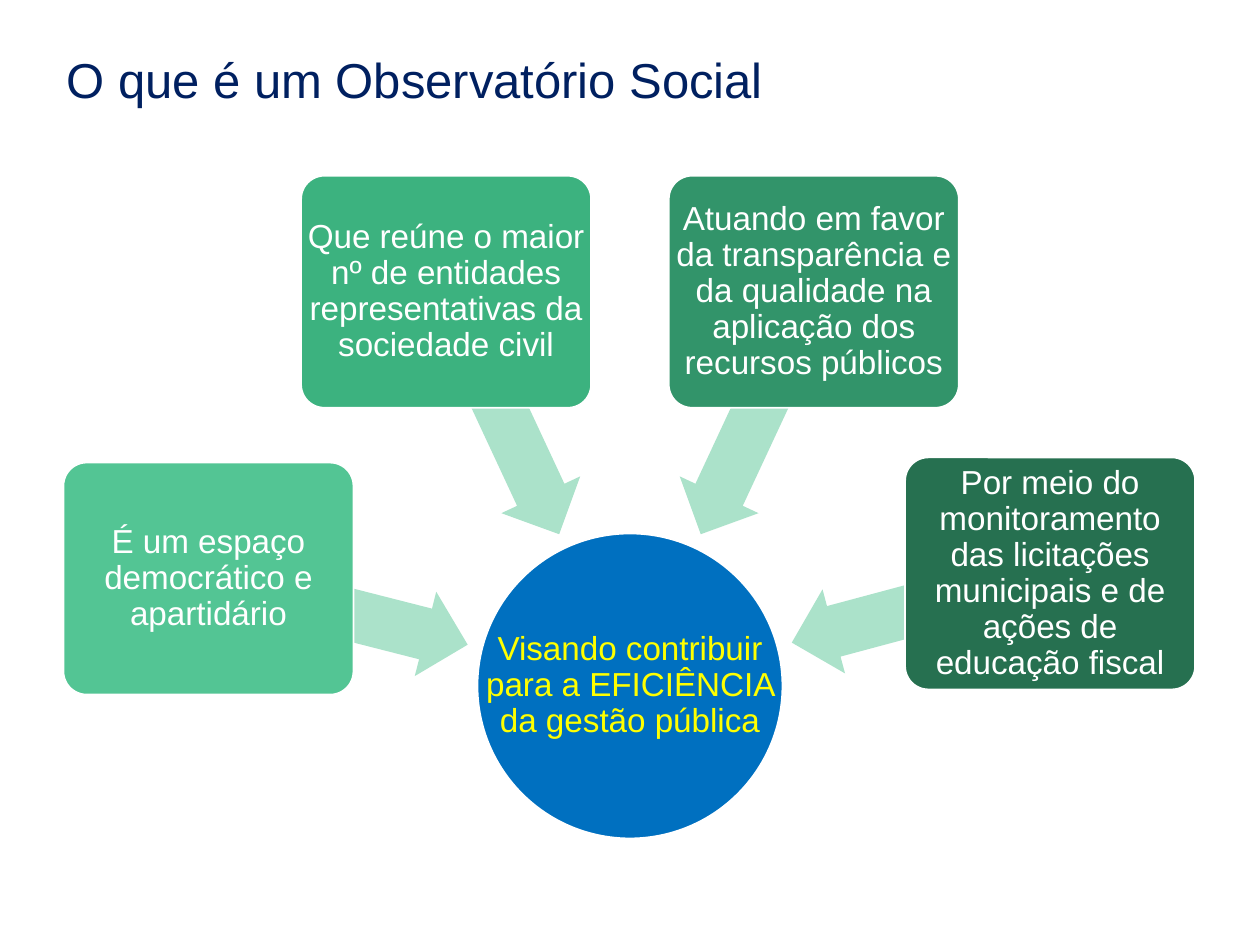
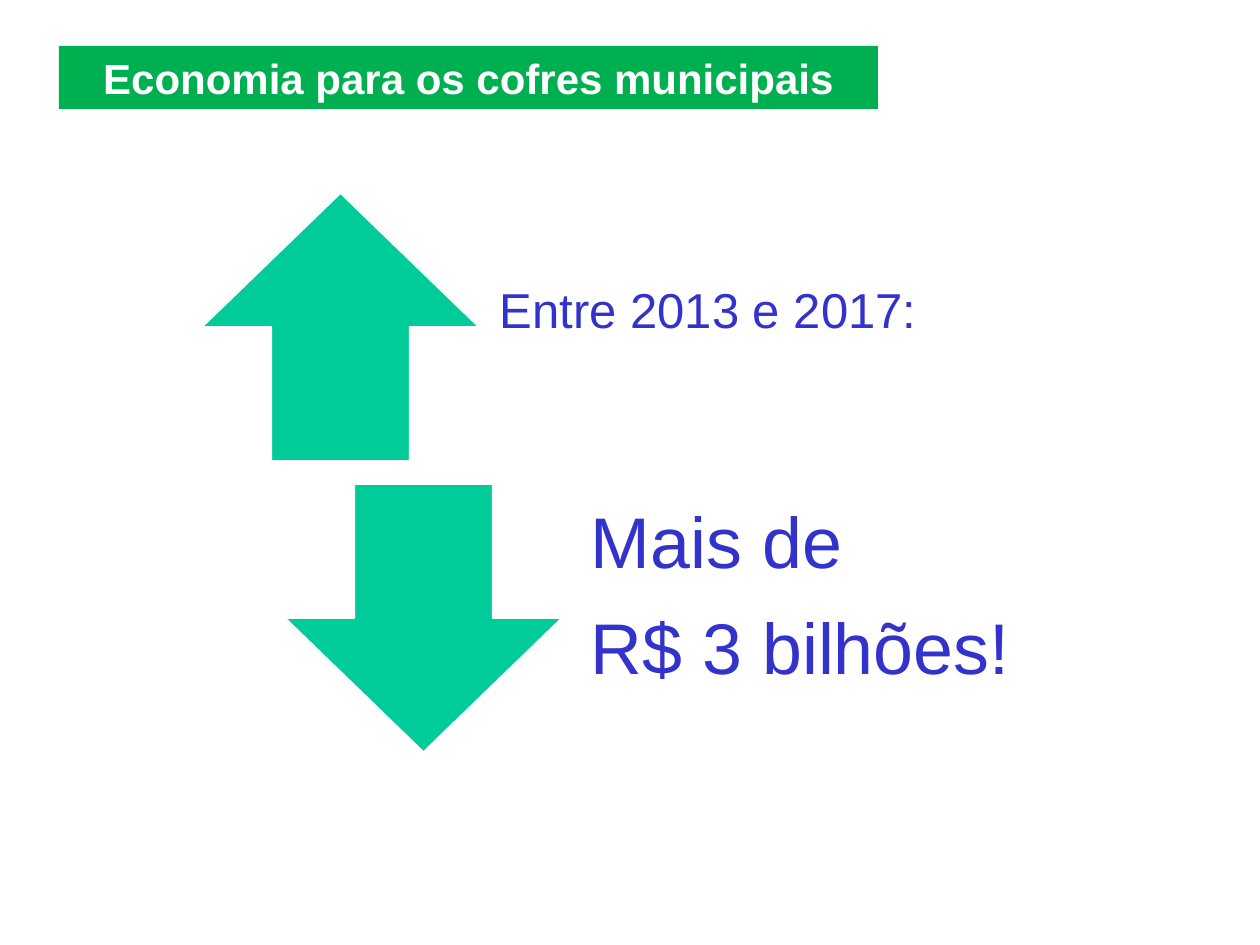
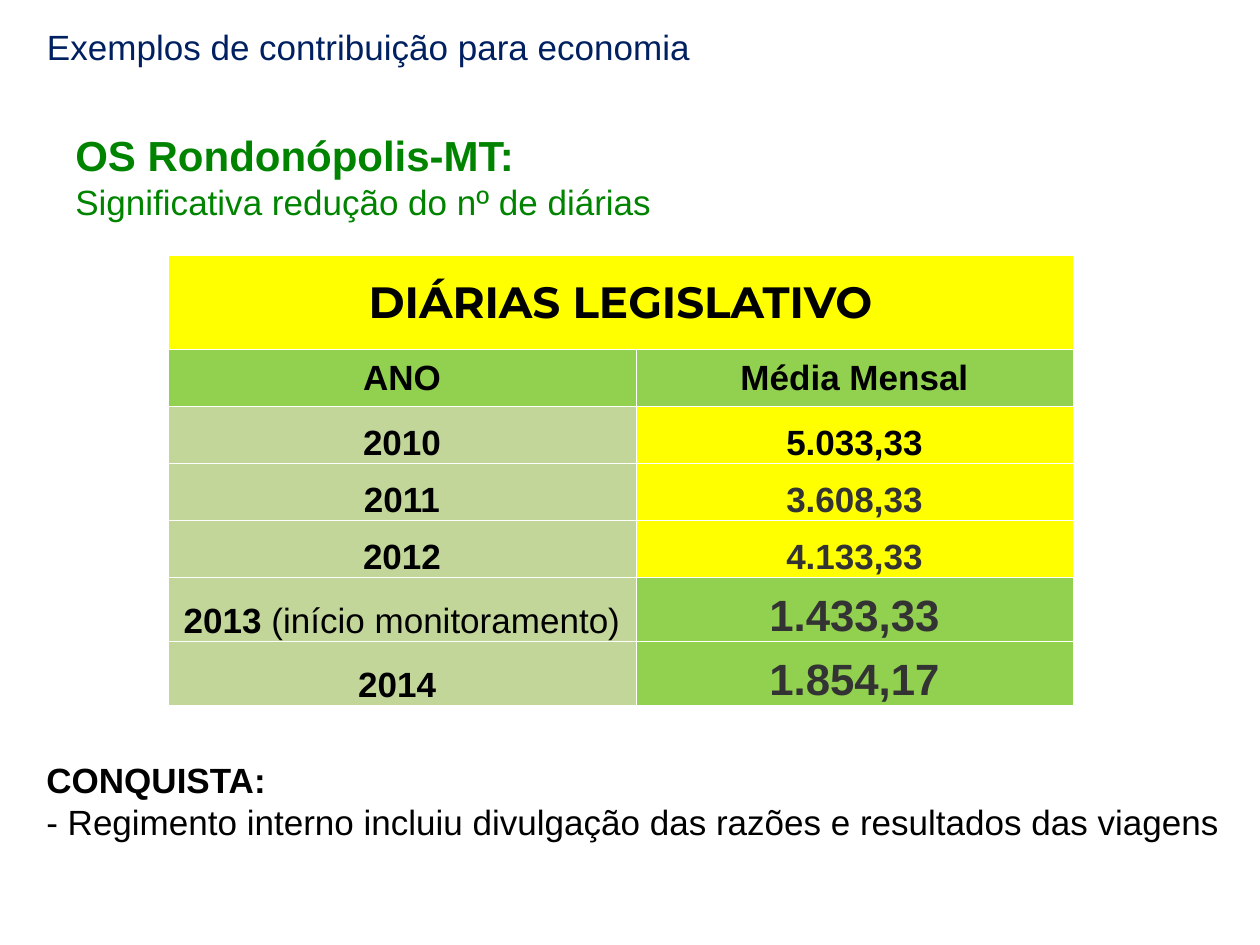
from math import cos, radians, sin

from lxml.etree import SubElement
from pptx import Presentation
from pptx.dml.color import RGBColor
from pptx.enum.shapes import MSO_SHAPE
from pptx.enum.text import MSO_ANCHOR, MSO_AUTO_SIZE, PP_ALIGN
from pptx.oxml.ns import qn
from pptx.util import Emu, Pt

# Shared style
EMU_PER_PX = 914400 / 126
FONT = "Arial"
TITLE_FONT = "Montserrat"
COLORS = {
    "white": "FFFFFF", "black": "000000", "gray": "333333",
    "navy": "002060", "blue": "0070C0", "indigo": "3333CC",
    "yellow": "FFFF00", "band": "00B050", "heading": "008400",
    "teal": "00CC99", "mint": "ABE2CA", "lime": "92D050", "sage": "C2D69A",
    "card1": "53C594", "card2": "3CB27F", "card3": "32946A", "card4": "267050",
}
LEFT, CENTER = PP_ALIGN.LEFT, PP_ALIGN.CENTER

# Wheel on the first slide: angle, card colour, text
HUB_X, HUB_Y, HUB_SIZE = 630, 686, 305
ARROW_RADIUS, CARD_RADIUS = 301, 435
CARDS = [
    (194.3, "card1", "É um espaço democrático e apartidário"),
    (245, "card2", "Que reúne o maior nº de entidades representativas da sociedade civil"),
    (295, "card3", "Atuando em favor da transparência e da qualidade na aplicação "
                   "dos recursos públicos"),
    (345, "card4", "Por meio do monitoramento das licitações municipais e de ações "
                   "de educação fiscal"),
]


def px(length):
    return Emu(round(length * EMU_PER_PX))


def rgb(name):
    return RGBColor.from_string(COLORS[name])


def run(text, size, color, bold=False, font=FONT):
    return {"text": text, "size": size, "color": color, "bold": bold, "font": font}


def write(frame, lines, align=LEFT, line_spacing=None, space_after=0):
    """Each line is a list of runs and becomes one paragraph."""
    for index, runs in enumerate(lines):
        paragraph = frame.add_paragraph() if index else frame.paragraphs[0]
        paragraph.alignment = align
        paragraph.space_before = Pt(0)
        paragraph.space_after = Pt(space_after)
        if line_spacing:
            paragraph.line_spacing = line_spacing
        for part in runs:
            text_run = paragraph.add_run()
            text_run.text = part["text"]
            text_run.font.size = Pt(part["size"])
            text_run.font.name = part["font"]
            text_run.font.bold = part["bold"]
            text_run.font.color.rgb = rgb(part["color"])


def set_insets(target, left, top, right, bottom):
    target.margin_left, target.margin_top = px(left), px(top)
    target.margin_right, target.margin_bottom = px(right), px(bottom)


def set_frame(frame, anchor, insets=None):
    frame.word_wrap = True
    frame.auto_size = MSO_AUTO_SIZE.NONE
    frame.vertical_anchor = anchor
    if insets:
        set_insets(frame, *insets)


def add_title(slide, box, part, anchor=MSO_ANCHOR.MIDDLE, align=LEFT, insets=None):
    title = slide.shapes.title
    title.left, title.top, title.width, title.height = map(px, box)
    set_frame(title.text_frame, anchor, insets)
    write(title.text_frame, [[part]], align)
    return title


def add_text(slide, box, lines, anchor=MSO_ANCHOR.MIDDLE, insets=None, **style):
    text_box = slide.shapes.add_textbox(*map(px, box))
    set_frame(text_box.text_frame, anchor, insets)
    write(text_box.text_frame, lines, **style)


def add_figure(slide, kind, box, fill, outlined=True, adjustments=(), rotation=0):
    shape = slide.shapes.add_shape(kind, *map(px, box))
    shape.shadow.inherit = False
    shape.fill.solid()
    shape.fill.fore_color.rgb = rgb(fill)
    if outlined:
        shape.line.color.rgb = rgb("white")
        shape.line.width = Pt(1)
    else:
        shape.line.fill.background()
    for index, value in enumerate(adjustments):
        shape.adjustments[index] = value
    shape.rotation = rotation


def wheel_box(angle, radius, width, height):
    """Box centred at a given angle and distance from the hub."""
    x = HUB_X + radius * cos(radians(angle))
    y = HUB_Y + radius * sin(radians(angle))
    return x - width / 2, y - height / 2, width, height


def add_cell_borders(cell):
    properties = cell._tc.get_or_add_tcPr()
    for position, side in enumerate(("a:lnL", "a:lnR", "a:lnT", "a:lnB")):
        line = SubElement(properties, qn(side), w=str(Pt(0.5)))
        fill = SubElement(line, qn("a:solidFill"))
        SubElement(fill, qn("a:srgbClr"), val=COLORS["white"])
        properties.remove(line)
        properties.insert(position, line)


def fill_cell(cell, runs, fill, anchor):
    cell.fill.solid()
    cell.fill.fore_color.rgb = rgb(fill)
    set_insets(cell, 1, 1, 1, 0)
    cell.vertical_anchor = anchor
    write(cell.text_frame, [runs], CENTER)
    add_cell_borders(cell)


def build_wheel_slide(slide):
    add_title(slide, (54, 0, 1095, 158),
              run("O que é um Observatório Social", 28, "navy"))

    # Hub
    hub = wheel_box(0, 0, HUB_SIZE, HUB_SIZE)
    add_figure(slide, MSO_SHAPE.OVAL, hub, "blue")
    add_text(slide, hub,
             [[run("Visando contribuir para a EFICIÊNCIA da gestão pública", 19, "yellow")]],
             insets=(1, 1, 1, 1), align=CENTER, line_spacing=0.9)

    # Cards with arrows towards the hub
    for angle, color, text in CARDS:
        add_figure(slide, MSO_SHAPE.LEFT_ARROW, wheel_box(angle, ARROW_RADIUS, 267, 87),
                   "mint", outlined=False, adjustments=(0.6, 0.5), rotation=angle)
        card = wheel_box(angle, CARD_RADIUS, 290, 232)
        add_figure(slide, MSO_SHAPE.ROUNDED_RECTANGLE, card, color, adjustments=(0.1,))
        add_text(slide, card, [[run(text, 19, "white")]], insets=(5, 5, 5, 5),
                 align=CENTER, line_spacing=0.9)


def build_savings_slide(slide):
    title = add_title(slide, (59, 46, 819, 63),
                      run("Economia para os cofres municipais", 24, "white", True),
                      MSO_ANCHOR.TOP, CENTER, (13, 6, 13, 6))
    title.fill.solid()
    title.fill.fore_color.rgb = rgb("band")

    # Arrows and their messages
    add_figure(slide, MSO_SHAPE.UP_ARROW, (202, 193, 277, 268), "teal")
    add_text(slide, (472, 197, 578, 260), [[run("Entre 2013 e 2017:", 28, "indigo")]],
             insets=(28, 0, 28, 28), line_spacing=0.9)
    add_figure(slide, MSO_SHAPE.DOWN_ARROW, (285, 484, 277, 268), "teal")
    add_text(slide, (551, 484, 508, 268),
             [[run(text, 41, "indigo")] for text in ("Mais de", "R$ 3 bilhões!")],
             insets=(40, 0, 40, 40), line_spacing=0.9, space_after=16.5)


def build_allowance_table(slide):
    label = lambda text: [run(text, 20, "black", True)]
    rows = [
        (label("2010"), run("5.033,33", 20, "black", True), "yellow"),
        (label("2011"), run("3.608,33", 20, "gray", True), "yellow"),
        (label("2012"), run("4.133,33", 20, "gray", True), "yellow"),
        (label("2013 ") + [run("(início monitoramento)", 20, "black")],
         run("1.433,33", 25, "gray", True), "lime"),
        (label("2014 "), run("1.854,17", 25, "gray", True), "lime"),
    ]
    heights = [94, 57, 57, 57, 57, 64, 64]
    widths = [468, 437]
    frame = slide.shapes.add_table(len(heights), len(widths), px(168), px(255),
                                   px(sum(widths)), px(sum(heights)))
    table = frame.table
    for row, height in zip(table.rows, heights):
        row.height = px(height)
    for column, width in zip(table.columns, widths):
        column.width = px(width)

    # Headings
    table.cell(0, 0).merge(table.cell(0, 1))
    fill_cell(table.cell(0, 0),
              [run("DIÁRIAS LEGISLATIVO", 25, "black", True, TITLE_FONT)],
              "yellow", MSO_ANCHOR.MIDDLE)
    for column, text in enumerate(("ANO", "Média Mensal")):
        fill_cell(table.cell(1, column), label(text), "lime", MSO_ANCHOR.MIDDLE)

    # Years and averages
    for index, (year, average, fill) in enumerate(rows, start=2):
        fill_cell(table.cell(index, 0), year, "sage", MSO_ANCHOR.BOTTOM)
        fill_cell(table.cell(index, 1), [average], fill, MSO_ANCHOR.BOTTOM)


def build_example_slide(slide):
    add_title(slide, (34, 1, 932, 126),
              run("Exemplos de contribuição para economia", 20, "navy"),
              MSO_ANCHOR.TOP, insets=(13, 24, 13, 6))
    add_text(slide, (63, 97, 1134, 158),
             [[run("OS Rondonópolis-MT:", 24, "heading", True)],
              [run("Significativa redução do nº de diárias", 20, "heading")]])
    build_allowance_table(slide)
    add_text(slide, (34, 752, 1211, 97),
             [[run("CONQUISTA:", 20, "black", True)],
              [run("- Regimento interno incluiu divulgação das razões e resultados "
                   "das viagens", 20, "black")]],
             MSO_ANCHOR.TOP)


def main():
    presentation = Presentation()
    presentation.slide_width, presentation.slide_height = px(1260), px(945)
    title_only = presentation.slide_layouts[5]
    for build in (build_wheel_slide, build_savings_slide, build_example_slide):
        build(presentation.slides.add_slide(title_only))
    presentation.save("out.pptx")


if __name__ == "__main__":
    main()
